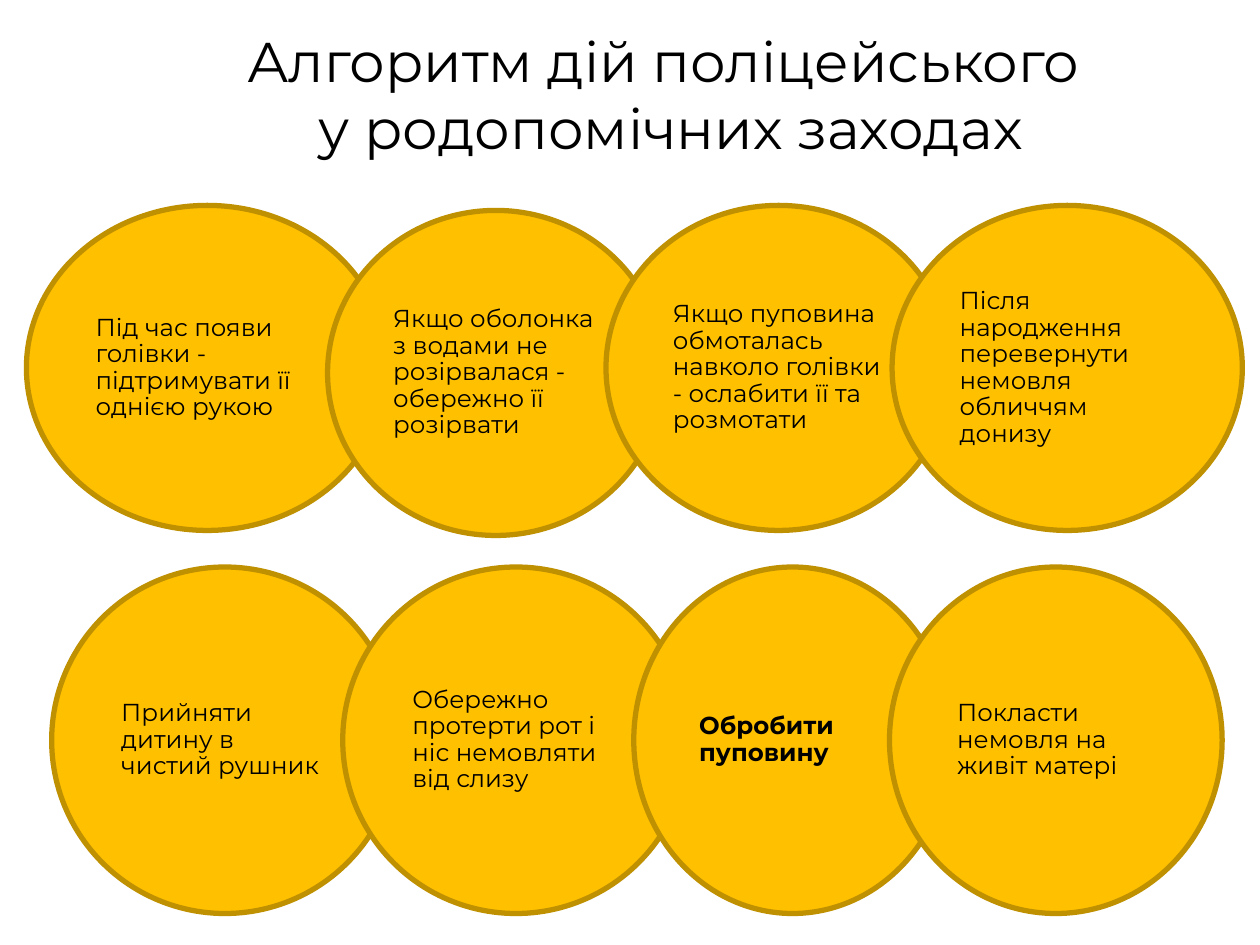
import pptx
import pptx.dml.color
import pptx.enum.shapes
import pptx.enum.text
import pptx.util

Inches = pptx.util.Inches
Pt = pptx.util.Pt

FONT = "Montserrat"
TITLE = "Алгоритм дій поліцейського \vу родопомічних заходах"

BIRTH_STEPS = [
    (0.21, 1.63, 2.87, "Під час появи голівки - підтримувати її однією рукою"),
    (2.6, 1.67, 2.67, "Якщо оболонка з водами не розірвалася - обережно її розірвати"),
    (4.81, 1.63, 2.74, "Якщо пуповина обмоталась навколо голівки - ослабити її та розмотати"),
    (7.08, 1.63, 2.78, "Після народження перевернути немовля обличчям донизу"),
]
NEWBORN_STEPS = [
    (0.41, 4.5, 2.75, "Прийняти дитину в чистий рушник"),
    (2.72, 4.5, 2.75, "Обережно протерти рот і ніс немовляти від слизу"),
    (5.03, 4.5, 2.52, "Обробити пуповину"),
    (7.06, 4.5, 2.64, "Покласти немовля на живіт матері"),
]
KEY_STEP = "Обробити пуповину"


def color(value):
    return pptx.dml.color.RGBColor.from_string(value)


def write(paragraph, text, size, alignment, bold=False):
    paragraph.text = text
    paragraph.alignment = alignment
    paragraph.font.name = FONT
    paragraph.font.size = Pt(size)
    paragraph.font.bold = bold
    paragraph.font.color.rgb = color("000000")


def add_title(slide):
    box = slide.shapes.add_textbox(Inches(1.56), Inches(0.16), Inches(7.53), Inches(1.18))
    frame = box.text_frame
    frame.word_wrap = False
    frame.auto_size = pptx.enum.text.MSO_AUTO_SIZE.SHAPE_TO_FIT_TEXT
    write(frame.paragraphs[0], TITLE, 32, pptx.enum.text.PP_ALIGN.CENTER)


def add_step(group, left, top, width, height, side_inset, text):
    circle = group.shapes.add_shape(
        pptx.enum.shapes.MSO_SHAPE.OVAL,
        Inches(left), Inches(top), Inches(width), Inches(height),
    )
    circle.shadow.inherit = False
    circle.fill.solid()
    circle.fill.fore_color.rgb = color("FFC000")
    circle.line.color.rgb = color("BF9000")
    circle.line.width = Pt(3)
    frame = circle.text_frame
    frame.word_wrap = True
    frame.vertical_anchor = pptx.enum.text.MSO_ANCHOR.MIDDLE
    frame.margin_left = frame.margin_right = Inches(side_inset)
    frame.margin_top = frame.margin_bottom = Inches(0.02)
    paragraph = frame.paragraphs[0]
    write(paragraph, text, 14, pptx.enum.text.PP_ALIGN.LEFT, bold=text == KEY_STEP)
    paragraph.line_spacing = 0.9


def add_chain(slide, steps, height, side_inset):
    group = slide.shapes.add_group_shape()
    for left, top, width, text in steps:
        add_step(group, left, top, width, height, side_inset, text)


def main():
    deck = pptx.Presentation()
    deck.slide_width = Inches(10)
    deck.slide_height = Inches(7.5)
    slide = deck.slides.add_slide(deck.slide_layouts[6])
    add_title(slide)
    add_chain(slide, BIRTH_STEPS, 2.58, 0.13)
    add_chain(slide, NEWBORN_STEPS, 2.75, 0.15)
    deck.save("out.pptx")


if __name__ == "__main__":
    main()
